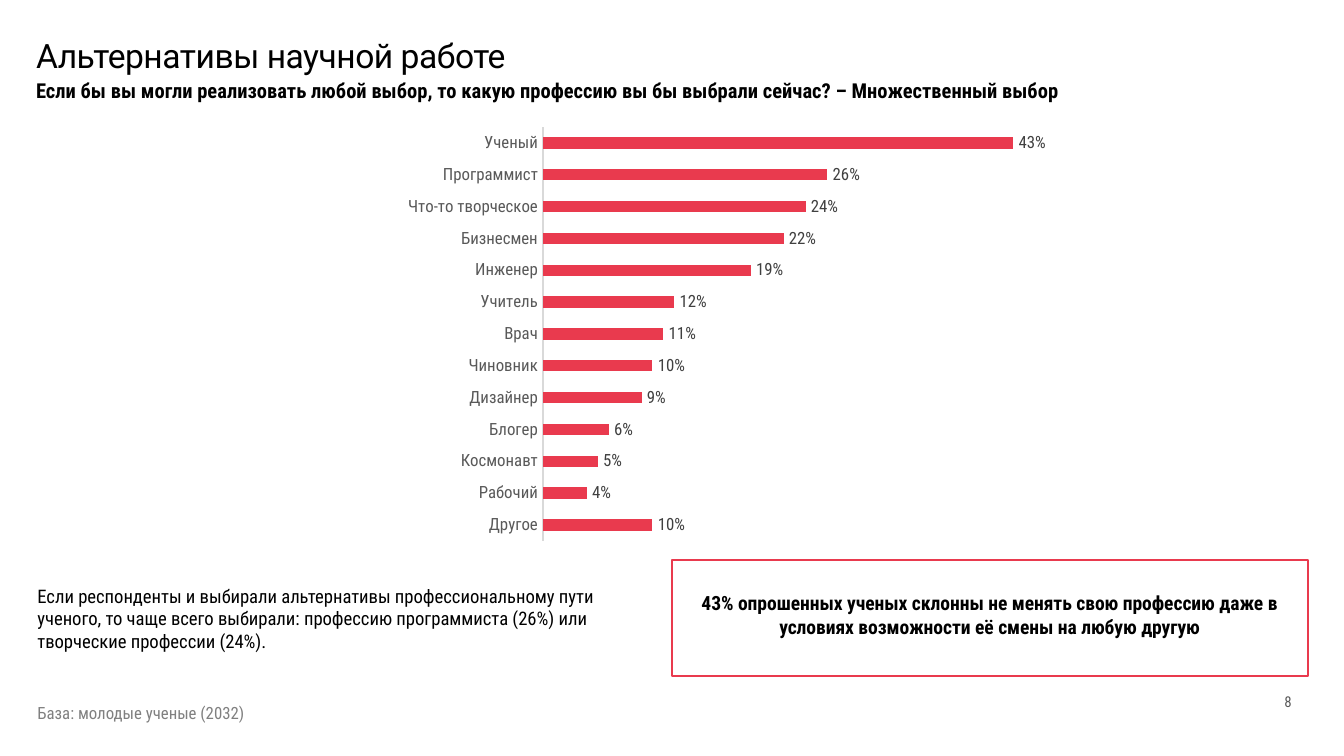
from dataclasses import dataclass

import pptx
import pptx.chart.data
import pptx.dml.color
import pptx.enum.chart
import pptx.enum.shapes
import pptx.enum.text
import pptx.oxml
import pptx.oxml.ns
import pptx.util
from pptx.dml.color import RGBColor
from pptx.util import Inches, Pt

RED = RGBColor(0xE9, 0x3A, 0x4E)
BLACK = RGBColor(0x00, 0x00, 0x00)
DARK = RGBColor(0x40, 0x40, 0x40)
SLATE = RGBColor(0x59, 0x59, 0x59)
GRAY = RGBColor(0x80, 0x80, 0x80)
LIGHT = RGBColor(0xD9, 0xD9, 0xD9)
CONDENSED = "Roboto Condensed"
PERCENT = "###0%"
ALIGN = pptx.enum.text.PP_ALIGN
ANCHOR = pptx.enum.text.MSO_ANCHOR


@dataclass
class Label:
    text: str
    left: float
    top: float
    width: float
    height: float
    size: float
    color: RGBColor = BLACK
    font: str = CONDENSED
    bold: bool = False
    align: ALIGN = ALIGN.LEFT
    anchor: ANCHOR = ANCHOR.TOP
    inset: float = 0.05
    line_pt: float | None = None
    spacing: int | None = None


LABELS = [
    Label("Альтернативы научной работе", 0.17, 0.15, 8.62, 1.08, 18,
          font="Roboto", inset=0.13, line_pt=20, spacing=-25),
    Label("8", 7.46, 5.07, 2.25, 0.3, 8, SLATE, align=ALIGN.RIGHT,
          anchor=ANCHOR.MIDDLE),
    Label("Если бы вы могли реализовать любой выбор, то какую профессию "
          "вы бы выбрали сейчас? – Множественный выбор",
          0.17, 0.49, 8.24, 0.7, 11, bold=True, inset=0.1),
    Label("43% опрошенных ученых склонны не менять свою профессию даже в "
          "условиях возможности её смены на любую другую",
          5, 4.35, 4.73, 0.45, 10.5, bold=True, align=ALIGN.CENTER),
    Label("Если респонденты и выбирали альтернативы профессиональному пути "
          "ученого, то чаще всего выбирали: профессию программиста (26%) или "
          "творческие профессии (24%).", 0.18, 4.3, 4.82, 0.61, 10),
    Label("База: молодые ученые (2032)", 0.18, 5.18, 4.82, 0.25, 9, GRAY),
]

PROFESSIONS = {
    "Ученый": 0.43, "Программист": 0.26, "Что-то творческое": 0.24,
    "Бизнесмен": 0.22, "Инженер": 0.19, "Учитель": 0.12, "Врач": 0.11,
    "Чиновник": 0.1, "Дизайнер": 0.09, "Блогер": 0.06, "Космонавт": 0.05,
    "Рабочий": 0.04, "Другое": 0.1,
}


def style_font(font, size: float, color: RGBColor, name: str = CONDENSED) -> None:
    font.size = Pt(size)
    font.name = name
    font.color.rgb = color


def add_label(s, label: Label) -> None:
    sp = s.shapes.add_textbox(Inches(label.left), Inches(label.top),
                              Inches(label.width), Inches(label.height))
    tf = sp.text_frame
    tf.word_wrap = True
    tf.vertical_anchor = label.anchor
    tf.margin_top = tf.margin_bottom = Inches(label.inset)
    p = tf.paragraphs[0]
    p.alignment = label.align
    if label.line_pt:
        p.line_spacing = Pt(label.line_pt)
    r = p.add_run()
    r.text = label.text
    style_font(r.font, label.size, label.color, label.font)
    r.font.bold = label.bold
    if label.spacing:
        r.font._element.set("spc", str(label.spacing))


def add_callout_frame(s) -> None:
    sp = s.shapes.add_shape(pptx.enum.shapes.MSO_SHAPE.RECTANGLE,
                            Inches(5), Inches(4.17), Inches(4.73), Inches(0.86))
    sp.shadow.inherit = False
    sp.fill.background()
    sp.line.color.rgb = RED
    sp.line.width = Pt(1)


def set_plot_layout(chart, x: float, y: float, w: float, h: float) -> None:
    area = chart._chartSpace.chart.plotArea
    for old in area.findall(pptx.oxml.ns.qn("c:layout")):
        area.remove(old)
    sizes = "".join(f'<c:{tag} val="{val}"/>'
                    for tag, val in zip("xywh", (x, y, w, h)))
    area.insert(0, pptx.oxml.parse_xml(
        f'<c:layout {pptx.oxml.ns.nsdecls("c")}><c:manualLayout>'
        '<c:layoutTarget val="inner"/><c:xMode val="edge"/>'
        f'<c:yMode val="edge"/>{sizes}</c:manualLayout></c:layout>'))


def add_profession_chart(s) -> None:
    data = pptx.chart.data.CategoryChartData(number_format=PERCENT)
    data.categories = list(PROFESSIONS)
    data.add_series("Series 1", list(PROFESSIONS.values()))
    chart = s.shapes.add_chart(
        pptx.enum.chart.XL_CHART_TYPE.BAR_CLUSTERED, Inches(1.84), Inches(0.94),
        Inches(6.67), Inches(3.09), data).chart
    chart.has_legend = False
    chart.has_title = False
    style_font(chart.font, 9, BLACK)
    set_plot_layout(chart, 0.33, 0, 0.61, 1)

    # Axes
    cat = chart.category_axis
    cat.reverse_order = True
    cat.major_tick_mark = pptx.enum.chart.XL_TICK_MARK.NONE
    cat.format.line.color.rgb = LIGHT
    cat.format.line.width = Pt(0.75)
    style_font(cat.tick_labels.font, 9, SLATE)
    val = chart.value_axis
    val.visible = False
    val.has_major_gridlines = False
    val.minimum_scale, val.maximum_scale = 0, 0.5
    val.tick_labels.number_format = PERCENT
    val.tick_labels.number_format_is_linked = False

    # Bars and their labels
    plot = chart.plots[0]
    plot.gap_width = 182
    plot.vary_by_categories = False
    series = plot.series[0]
    series.format.fill.solid()
    series.format.fill.fore_color.rgb = RED
    labels = series.data_labels
    labels.show_value = True
    labels.number_format = PERCENT
    labels.number_format_is_linked = False
    labels.position = pptx.enum.chart.XL_LABEL_POSITION.OUTSIDE_END
    style_font(labels.font, 9, DARK)


def main() -> None:
    prs = pptx.Presentation()
    # Widescreen 16:9
    prs.slide_width = Inches(10)
    prs.slide_height = prs.slide_width * 9 // 16
    s = prs.slides.add_slide(prs.slide_layouts[6])
    add_callout_frame(s)
    add_profession_chart(s)
    for label in LABELS:
        add_label(s, label)
    prs.save("out.pptx")


if __name__ == "__main__":
    main()
